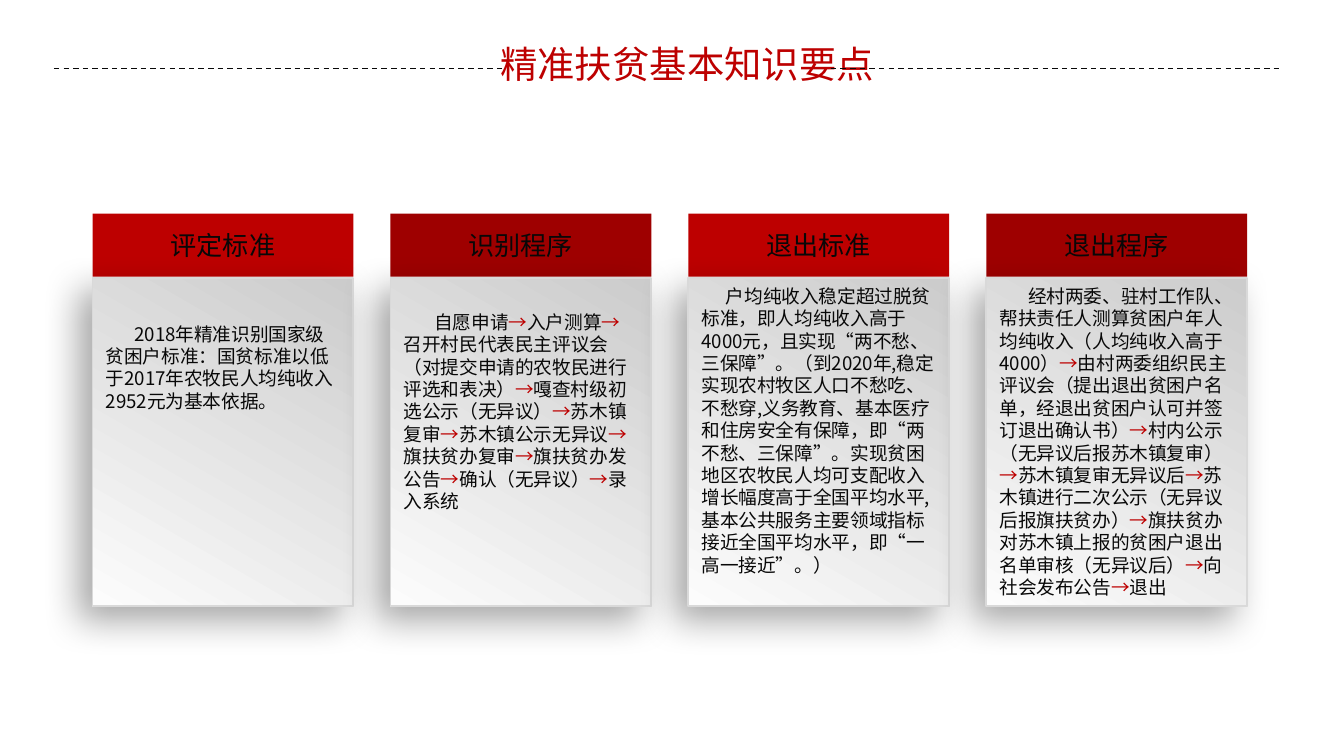
from lxml.etree import SubElement
from pptx import Presentation
from pptx.dml.color import RGBColor
from pptx.enum.dml import MSO_LINE_DASH_STYLE as DASH
from pptx.enum.shapes import MSO_CONNECTOR, MSO_SHAPE
from pptx.enum.text import PP_ALIGN
from pptx.oxml import parse_xml
from pptx.oxml.ns import nsdecls, qn
from pptx.util import Cm, Pt

RED = RGBColor(0xBD, 0x00, 0x00)
DARK_RED = RGBColor(0x9E, 0x00, 0x00)
INK = RGBColor(0x08, 0x08, 0x08)
EDGE = RGBColor(0xD9, 0xD9, 0xD9)
GREY = RGBColor(0xCC, 0xCC, 0xCC)
PALE = RGBColor(0xFC, 0xFC, 0xFC)
FONT = "Noto Sans CJK SC"
ARROW = "→"

TITLE = "精准扶贫基本知识要点"
# heading, body top (cm), body height (cm), first-line indent (cm), body
CARDS = [
    ("评定标准", 5.97, 1.96, 0.54,
     "2018年精准识别国家级贫困户标准：国贫标准以低于2017年农牧民人均纯收入2952元为基本依据。"),
    ("识别程序", 5.75, 4.1, 0.58,
     "自愿申请→入户测算→召开村民代表民主评议会（对提交申请的农牧民进行评选和表决）"
     "→嘎查村级初选公示（无异议）→苏木镇复审→苏木镇公示无异议→旗扶贫办复审"
     "→旗扶贫办发公告→确认（无异议）→录入系统"),
    ("退出标准", 5.26, 5.82, 0.46,
     "户均纯收入稳定超过脱贫标准，即人均纯收入高于4000元，且实现“两不愁、三保障”。"
     "（到2020年,稳定实现农村牧区人口不愁吃、不愁穿,义务教育、基本医疗和住房安全有保障，"
     "即“两不愁、三保障”。实现贫困地区农牧民人均可支配收入增长幅度高于全国平均水平,"
     "基本公共服务主要领域指标接近全国平均水平，即“一高一接近”。）"),
    ("退出程序", 5.26, 6.25, 0.54,
     "经村两委、驻村工作队、帮扶责任人测算贫困户年人均纯收入（人均纯收入高于4000）"
     "→由村两委组织民主评议会（提出退出贫困户名单，经退出贫困户认可并签订退出确认书）"
     "→村内公示（无异议后报苏木镇复审）→苏木镇复审无异议后"
     "→苏木镇进行二次公示（无异议后报旗扶贫办）"
     "→旗扶贫办对苏木镇上报的贫困户退出名单审核（无异议后）→向社会发布公告→退出"),
]

CARD_LEFT, CARD_WIDTH, CARD_PITCH = 1.75, 4.93, 5.63
HEAD_TOP, HEAD_HEIGHT = 4.04, 1.19
PANEL_TOP, PANEL_HEIGHT = 5.26, 6.2
RULE_TOP, RULE_LENGTH = 1.3, 8.48
RULE_LEFTS = (15.7, 1.02)


def add_text(page, text, area, size, color=INK, align=PP_ALIGN.LEFT, indent=0):
    """Add a one-paragraph text box; arrows in the text turn red."""
    box = page.shapes.add_textbox(*map(Cm, area))
    frame = box.text_frame
    frame.word_wrap = True
    para = frame.paragraphs[0]
    para.alignment = align
    para.line_spacing = Pt(size * 1.2)
    if indent:
        properties = para._p.get_or_add_pPr()
        properties.set("marL", "0")
        properties.set("indent", str(Cm(indent)))
    for index, piece in enumerate(text.split(ARROW)):
        parts = [(ARROW, RED)] if index else []
        for words, shade in parts + [(piece, color)]:
            span = para.add_run()
            span.text = words
            span.font.name = FONT
            span.font.size = Pt(size)
            span.font.color.rgb = shade
            east_asian = SubElement(span.font._element, qn("a:ea"))
            east_asian.set("typeface", FONT)


def add_rectangle(page, area):
    box = page.shapes.add_shape(MSO_SHAPE.RECTANGLE, *map(Cm, area))
    box.shadow.inherit = False
    return box


def add_panel(page, area):
    """Add a grey gradient panel with a soft shadow at its lower left."""
    panel = add_rectangle(page, area)
    panel.fill.gradient()
    panel.fill.gradient_angle = 240
    for stop, color in zip(panel.fill.gradient_stops, (GREY, PALE)):
        stop.color.rgb = color
    first, last = panel.fill.gradient_stops
    first.position, last.position = 0, 1
    panel.line.color.rgb = EDGE
    panel.line.width = Pt(1)
    effects = panel._element.spPr.find(qn("a:effectLst"))
    effects.append(parse_xml(
        f'<a:outerShdw {nsdecls("a")} blurRad="{Pt(20)}" dist="{Pt(10)}" '
        f'dir="{136 * 60000}" algn="tr" rotWithShape="0">'
        '<a:srgbClr val="000000"><a:alpha val="34000"/></a:srgbClr></a:outerShdw>'))


def add_card(page, left, color, card):
    heading, body_top, body_height, indent, body = card
    header = add_rectangle(page, (left, HEAD_TOP, CARD_WIDTH, HEAD_HEIGHT))
    header.fill.solid()
    header.fill.fore_color.rgb = color
    header.line.fill.background()
    add_panel(page, (left, PANEL_TOP, CARD_WIDTH, PANEL_HEIGHT))
    add_text(page, heading, (left, 4.22, CARD_WIDTH, 0.86), 14, align=PP_ALIGN.CENTER)
    add_text(page, body, (left, body_top, CARD_WIDTH, body_height), 10, indent=indent)


def add_rule(page, left):
    rule = page.shapes.add_connector(
        MSO_CONNECTOR.STRAIGHT, Cm(left), Cm(RULE_TOP), Cm(left + RULE_LENGTH), Cm(RULE_TOP))
    rule.line.color.rgb = INK
    rule.line.width = Pt(0.75)
    rule.line.dash_style = DASH.DASH
    SubElement(rule._element.spPr, qn("a:effectLst"))


def main():
    deck = Presentation()
    deck.slide_width, deck.slide_height = Cm(25.4), Cm(14.29)
    page = deck.slides.add_slide(deck.slide_layouts[6])
    for index, card in enumerate(CARDS):
        color = DARK_RED if index % 2 else RED
        add_card(page, CARD_LEFT + index * CARD_PITCH, color, card)
    add_text(page, TITLE, (9.04, 0.66, 7.9, 1.96), 20, RED, PP_ALIGN.CENTER)
    for left in RULE_LEFTS:
        add_rule(page, left)
    deck.save("out.pptx")


if __name__ == "__main__":
    main()
